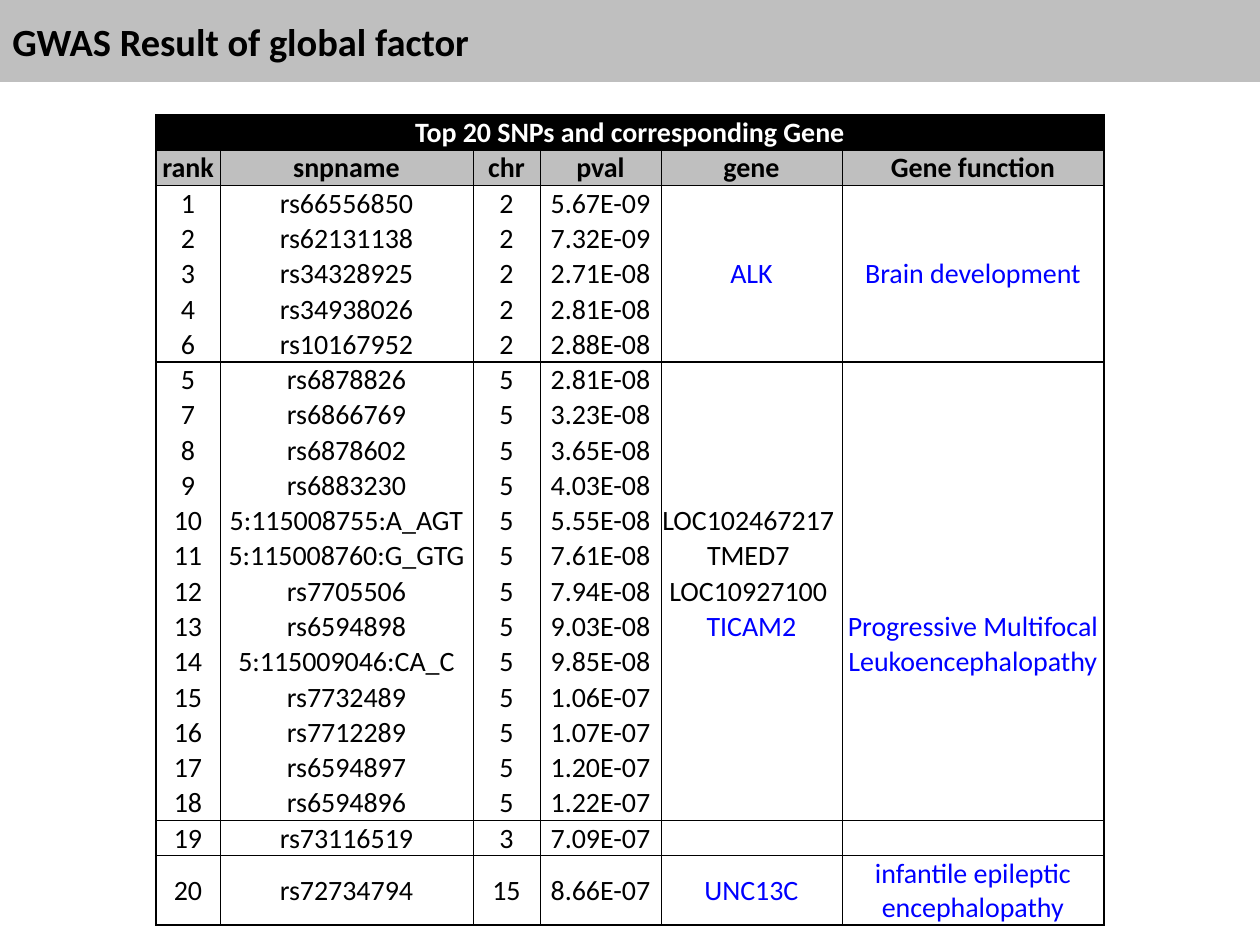
"""Build a slide with a table of the top 20 SNPs and their genes."""
from dataclasses import dataclass

from lxml import etree
from pptx import Presentation
from pptx import util as u
from pptx.dml.color import RGBColor
from pptx.enum import shapes, text
from pptx.oxml.ns import qn

PX = u.Inches(1) // 126


@dataclass(frozen=True)
class Theme:
    """Colours, font and sizes of the slide."""
    font: str = "Calibri"
    ink: str = "000000"
    paper: str = "FFFFFF"
    band: str = "BFBFBF"
    highlight: str = "0000FF"
    title_size: int = 22
    cell_size: int = 16
    thick: float = 1
    thin: float = 0.5


THEME = Theme()
CAPTION = "Top 20 SNPs and corresponding Gene"
HEADINGS = ("rank", "snpname", "chr", "pval", "gene", "Gene function")
COLUMN_WIDTHS = (64, 253, 67, 121, 181, 262)
ROW_HEIGHT, LAST_ROW_HEIGHT = 34, 67
SNPS = (
    ("1", "rs66556850", "2", "5.67E-09", "ALK", "Brain development"),
    ("2", "rs62131138", "2", "7.32E-09"),
    ("3", "rs34328925", "2", "2.71E-08"),
    ("4", "rs34938026", "2", "2.81E-08"),
    ("6", "rs10167952", "2", "2.88E-08"),
    ("5", "rs6878826", "5", "2.81E-08"),
    ("7", "rs6866769", "5", "3.23E-08"),
    ("8", "rs6878602", "5", "3.65E-08"),
    ("9", "rs6883230", "5", "4.03E-08"),
    ("10", "5:115008755:A_AGT", "5", "5.55E-08", "LOC102467217 "),
    ("11", "5:115008760:G_GTG", "5", "7.61E-08", "TMED7 "),
    ("12", "rs7705506", "5", "7.94E-08", "LOC10927100 "),
    ("13", "rs6594898", "5", "9.03E-08", "TICAM2", "Progressive Multifocal"),
    ("14", "5:115009046:CA_C", "5", "9.85E-08", "", "Leukoencephalopathy"),
    ("15", "rs7732489", "5", "1.06E-07"),
    ("16", "rs7712289", "5", "1.07E-07"),
    ("17", "rs6594897", "5", "1.20E-07"),
    ("18", "rs6594896", "5", "1.22E-07"),
    ("19", "rs73116519", "3", "7.09E-07"),
    ("20", "rs72734794", "15", "8.66E-07", "UNC13C",
     "infantile epileptic encephalopathy"),
)
HIGHLIGHTED_GENES = {"ALK", "TICAM2", "UNC13C"}
ROWS = ((CAPTION,), HEADINGS) + SNPS
RULED_ROWS = {-1, 0, 1, len(ROWS) - 1} | {
    row for row in range(2, len(ROWS) - 1) if ROWS[row][2] != ROWS[row + 1][2]}


def write_text(frame, content, *, size, color=THEME.ink, bold=False,
               align=text.PP_ALIGN.LEFT):
    """Write one formatted paragraph, keeping the size when it is empty."""
    frame.word_wrap = True
    paragraph = frame.paragraphs[0]
    paragraph.alignment = align
    if not content:
        etree.SubElement(paragraph._p, qn("a:endParaRPr"), sz=str(size * 100))
        return
    run = paragraph.add_run()
    run.text = content
    run.font.name, run.font.size, run.font.bold = THEME.font, u.Pt(size), bold
    run.font.color.rgb = RGBColor.from_string(color)


def add_title(slide, content, width, height):
    """Add the title band across the top."""
    band = slide.shapes.add_shape(
        shapes.MSO_SHAPE.RECTANGLE, 0, 0, width * PX, height * PX)
    band.shadow.inherit = False
    band.fill.solid()
    band.fill.fore_color.rgb = RGBColor.from_string(THEME.band)
    band.line.fill.background()
    band.text_frame.vertical_anchor = text.MSO_ANCHOR.MIDDLE
    write_text(band.text_frame, content, size=THEME.title_size, bold=True)


def set_borders(cell, widths):
    """Draw left, right, top and bottom borders, where zero means none."""
    properties = cell._tc.get_or_add_tcPr()
    for side, width in zip("LRTB", widths):
        line = etree.SubElement(
            properties, qn(f"a:ln{side}"), w=str(int(u.Pt(width))))
        if width:
            fill = etree.SubElement(line, qn("a:solidFill"))
            etree.SubElement(fill, qn("a:srgbClr"), val=THEME.ink)
        else:
            etree.SubElement(line, qn("a:noFill"))


def border_widths(cell, row, column):
    """Work out the four border widths from the place of a cell."""
    last_row = row + (cell.span_height if cell.is_merge_origin else 1) - 1
    last_column = column + (cell.span_width if cell.is_merge_origin else 1) - 1
    return (
        THEME.thin if column else THEME.thick,
        THEME.thick if last_column == len(HEADINGS) - 1 else THEME.thin,
        THEME.thick if row - 1 in RULED_ROWS else 0,
        THEME.thick if last_row in RULED_ROWS else 0,
    )


def text_color(content, row, column):
    """Choose the text colour of a cell."""
    if row == 0:
        return THEME.paper
    is_function = row > 1 and column == len(HEADINGS) - 1
    if is_function or content in HIGHLIGHTED_GENES:
        return THEME.highlight
    return THEME.ink


def format_cell(cell, content, row, column):
    """Fill one cell with its text, borders and background."""
    cell.margin_left = cell.margin_right = cell.margin_top = PX
    cell.margin_bottom = 0
    cell.vertical_anchor = text.MSO_ANCHOR.MIDDLE
    set_borders(cell, border_widths(cell, row, column))
    if row < 2:
        cell.fill.solid()
        cell.fill.fore_color.rgb = RGBColor.from_string(
            (THEME.ink, THEME.band)[row])
    else:
        cell.fill.background()
    write_text(cell.text_frame, content, size=THEME.cell_size, bold=row < 2,
               color=text_color(content, row, column),
               align=text.PP_ALIGN.CENTER)


def add_snp_table(slide, left, top):
    """Add the table of SNPs with its merged caption and gene cells."""
    heights = [ROW_HEIGHT] * (len(ROWS) - 1) + [LAST_ROW_HEIGHT]
    table = slide.shapes.add_table(
        len(ROWS), len(HEADINGS), left * PX, top * PX,
        sum(COLUMN_WIDTHS) * PX, sum(heights) * PX).table
    table.first_row = table.horz_banding = False
    for column, width in zip(table.columns, COLUMN_WIDTHS):
        column.width = width * PX
    for row, height in zip(table.rows, heights):
        row.height = height * PX
    table.cell(0, 0).merge(table.cell(0, len(HEADINGS) - 1))
    for column in (4, 5):
        table.cell(2, column).merge(table.cell(6, column))
    for row, values in enumerate(ROWS):
        for column in range(len(HEADINGS)):
            content = values[column] if column < len(values) else ""
            format_cell(table.cell(row, column), content, row, column)


def main():
    """Build and save the slide."""
    deck = Presentation()
    deck.slide_width, deck.slide_height = 1260 * PX, 945 * PX
    slide = deck.slides.add_slide(deck.slide_layouts[6])
    add_snp_table(slide, 156, 115)
    add_title(slide, "GWAS Result of global factor", 1260, 82)
    deck.save("out.pptx")


if __name__ == "__main__":
    main()
